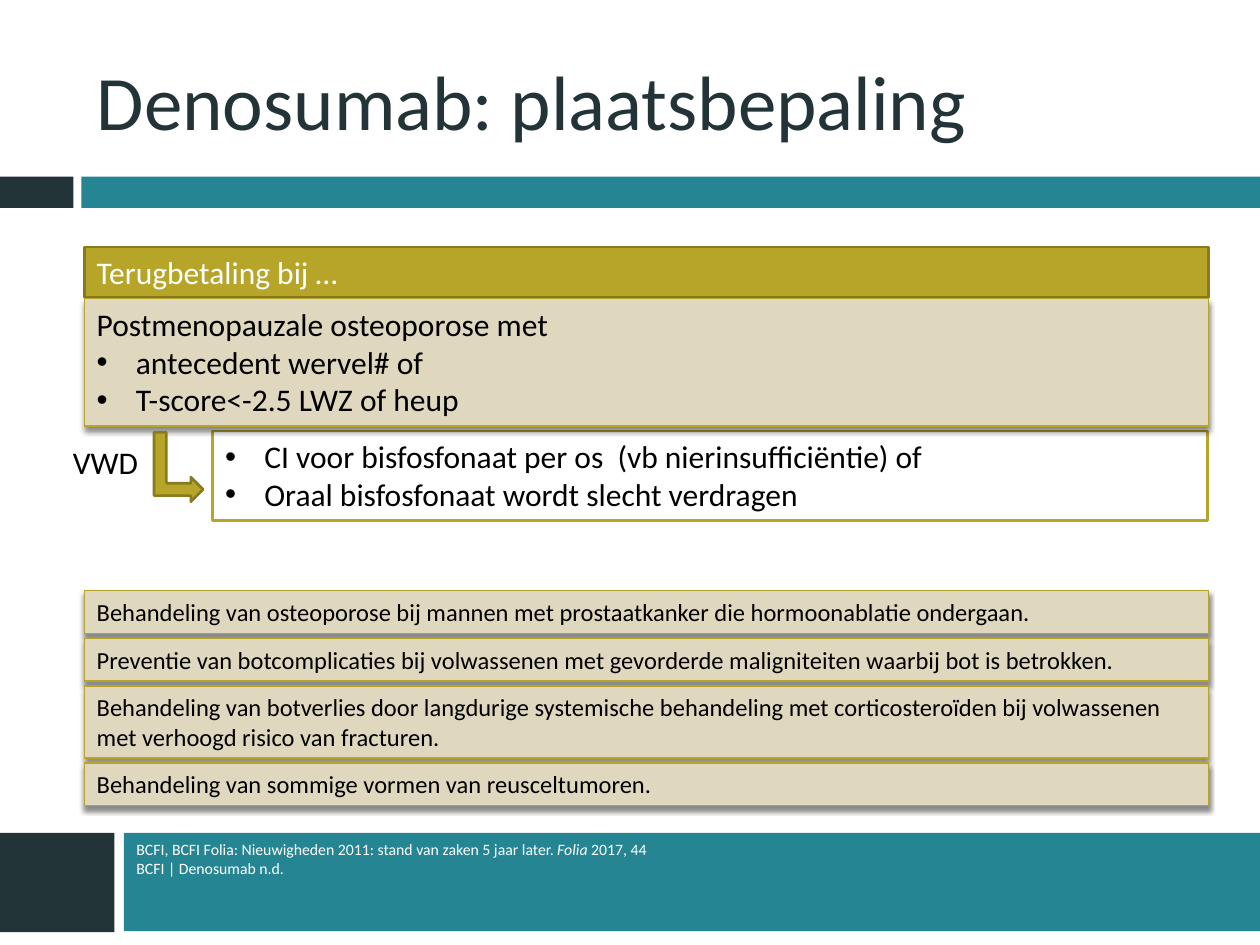
import pptx
import pptx.util
import pptx.dml.color
import pptx.enum.shapes
import pptx.enum.text
import pptx.oxml
import pptx.oxml.ns
from lxml import etree

Cm, Pt = pptx.util.Cm, pptx.util.Pt
SHAPES = pptx.enum.shapes.MSO_SHAPE
ANCHOR = pptx.enum.text.MSO_ANCHOR
RGB = pptx.dml.color.RGBColor.from_string
qn = pptx.oxml.ns.qn

COLORS = {"dark": "233438", "teal": "268593", "gold": "B7A52A", "olive": "877A1F",
          "sand": "DFD8BE", "white": "FFFFFF", "black": "000000"}
LEFT, WIDTH = 1.7, 22.66

deck = pptx.Presentation()
deck.slide_width, deck.slide_height = Cm(25.4), Cm(19.05)
page = deck.slides.add_slide(deck.slide_layouts[5])


def add_block(left, top, width, height, fill, line=None, weight=1.5,
              shape=SHAPES.RECTANGLE, shadow=False):
    block = page.shapes.add_shape(shape, Cm(left), Cm(top), Cm(width), Cm(height))
    block.fill.solid()
    block.fill.fore_color.rgb = RGB(COLORS[fill])
    if line:
        block.line.color.rgb = RGB(COLORS[line])
        block.line.width = Pt(weight)
    else:
        block.line.fill.background()
    block.shadow.inherit = False
    if shadow:
        effects = block._element.spPr.find(qn("a:effectLst"))
        outer = etree.SubElement(effects, qn("a:outerShdw"), blurRad=str(Pt(3)),
                                 dist=str(Pt(2.4)), dir="5400000", rotWithShape="0")
        color = etree.SubElement(outer, qn("a:srgbClr"), val=COLORS["black"])
        etree.SubElement(color, qn("a:alpha"), val="45000")
    return block


def write(box, lines, size, color="black", anchor=ANCHOR.TOP):
    """Fill a box with lines; a line starting with a bullet sign becomes a bullet."""
    frame = box.text_frame
    frame.word_wrap = True
    frame.vertical_anchor = anchor
    for number, line in enumerate(lines):
        para = frame.add_paragraph() if number else frame.paragraphs[0]
        para.alignment = pptx.enum.text.PP_ALIGN.LEFT
        if line.startswith("•"):
            properties = para._p.get_or_add_pPr()
            properties.set("marL", str(Cm(0.79)))
            properties.set("indent", str(-Cm(0.79)))
            etree.SubElement(properties, qn("a:buFont"), typeface="Arial")
            etree.SubElement(properties, qn("a:buChar"), char="•")
        span = para.add_run()
        span.text = line.lstrip("•")
        span.font.name = "Calibri"
        span.font.size = Pt(size)
        span.font.color.rgb = RGB(COLORS[color])


# Bands under the title and at the foot
for left, top, width, height, fill in [
    (0, 3.56, 1.48, 0.63, "dark"),
    (1.64, 3.56, 23.76, 0.63, "teal"),
    (-0.02, 16.79, 2.33, 2.0, "dark"),
    (2.5, 16.79, 22.9, 1.98, "teal"),
]:
    add_block(left, top, width, height, fill)

title = page.shapes.title
title.left, title.top, title.width, title.height = Cm(LEFT), Cm(0.64), Cm(WIDTH), Cm(2.74)
write(title, ["Denosumab: plaatsbepaling"], 44, "dark", ANCHOR.MIDDLE)

# Source reference
reference = page.shapes.add_textbox(Cm(2.5), Cm(16.81), Cm(21.64), Cm(1.96))
reference.text_frame.word_wrap = True
para = reference.text_frame.paragraphs[0]
for text, italic in [
    ("BCFI, BCFI Folia: Nieuwigheden 2011: stand van zaken 5 jaar later. ", False),
    ("Folia", True),
    (" 2017, 44", False),
    ("BCFI | Denosumab n.d.", False),
]:
    if text.startswith("BCFI |"):
        para.add_line_break()
    span = para.add_run()
    span.text = text
    span.font.name = "Calibri"
    span.font.size = Pt(9)
    span.font.italic = italic
    span.font.color.rgb = RGB(COLORS["white"])

# Reimbursement criteria
condition = add_block(4.29, 8.69, 20.05, 1.8, "white", "gold")
write(condition, ["•CI voor bisfosfonaat per os  (vb nierinsufficiëntie) of",
                  "•Oraal bisfosfonaat wordt slecht verdragen"], 18)

header = add_block(LEFT, 4.98, WIDTH, 1.02, "gold", "olive")
write(header, ["Terugbetaling bij …"], 18, "white")

criteria = add_block(LEFT, 6.02, WIDTH, 2.57, "sand", "gold", 0.79, shadow=True)
write(criteria, ["Postmenopauzale osteoporose met", "•antecedent wervel# of",
                 "•T-score<-2.5 LWZ of heup"], 18)

# Other indications, stacked with equal gaps
top = 11.91
for text, height in [
    ("Behandeling van osteoporose bij mannen met prostaatkanker die hormoonablatie ondergaan.", 0.86),
    ("Preventie van botcomplicaties bij volwassenen met gevorderde maligniteiten "
     "waarbij bot is betrokken.", 0.86),
    ("Behandeling van botverlies door langdurige systemische behandeling met corticosteroïden "
     "bij volwassenen met verhoogd risico van fracturen.", 1.45),
    ("Behandeling van sommige vormen van reusceltumoren.", 0.86),
]:
    indication = add_block(LEFT, top, WIDTH, height, "sand", "gold", 0.79, shadow=True)
    write(indication, [text], 14)
    top += height + 0.1

arrow = add_block(2.9, 8.92, 1.4, 0.99, "gold", "olive", shape=SHAPES.BENT_UP_ARROW)
arrow.rotation = 90

label = page.shapes.add_textbox(Cm(1.22), Cm(8.81), Cm(2.01), Cm(1.02))
write(label, ["VWD"], 18)

deck.save("out.pptx")
